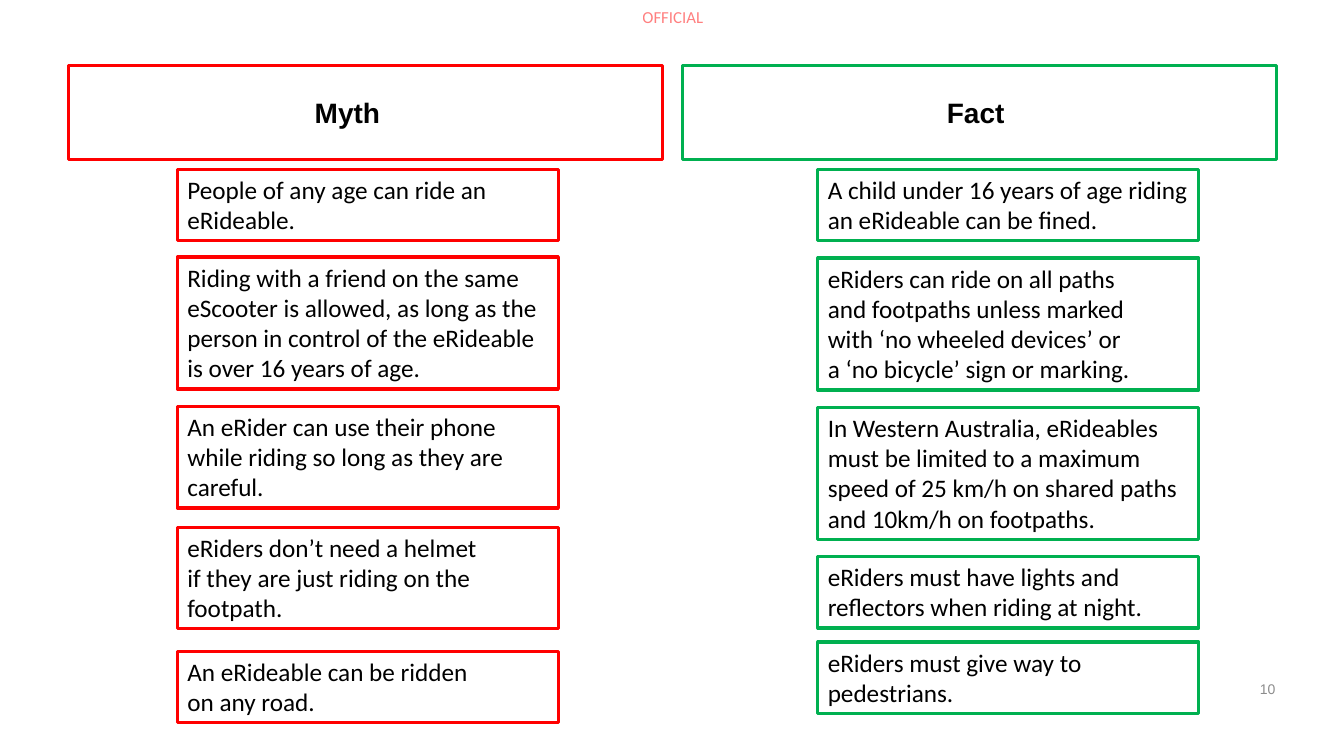
from pptx import Presentation
from pptx import util as u
from pptx.dml.color import RGBColor
from pptx.enum import shapes, text
from lxml import etree

RED, GREEN = "FF0000", "00B050"
MID, TOP = text.MSO_ANCHOR.MIDDLE, text.MSO_ANCHOR.TOP
LEFT, CENTER, RIGHT = text.PP_ALIGN.LEFT, text.PP_ALIGN.CENTER, text.PP_ALIGN.RIGHT


def rgb(code):
    return RGBColor.from_string(code)


class Deck:
    """Draws styled elements on a grid of 100 columns by 100 rows."""

    def __init__(self):
        self.prs = Presentation()
        self.prs.slide_width = u.Inches(13.33)
        self.prs.slide_height = u.Inches(7.5)
        self.slide = self.prs.slides.add_slide(self.prs.slide_layouts[6])

    def place(self, x, y, w, h):
        col, row = self.prs.slide_width / 100, self.prs.slide_height / 100
        return [int(n) for n in (x * col, y * row, w * col, h * row)]

    def letter(self, shape, words, size, face="Calibri", color="000000",
               bold=False, align=LEFT, anchor=TOP, pad=(0, 0, 0, 0), wrap=True):
        frame = shape.text_frame
        frame.word_wrap = wrap
        frame.vertical_anchor = anchor
        (frame.margin_left, frame.margin_top,
         frame.margin_right, frame.margin_bottom) = map(u.Inches, pad)
        frame.text = words
        for para in frame.paragraphs:
            para.alignment = align
            font = para.font
            font.name, font.size, font.bold = face, u.Pt(size), bold
            font.color.rgb = rgb(color)

    def label(self, words, area, size, **style):
        box = self.slide.shapes.add_textbox(*self.place(*area))
        self.letter(box, words, size, **style)
        return box

    def frame(self, words, area, edge, size, **style):
        box = self.slide.shapes.add_shape(
            shapes.MSO_SHAPE.RECTANGLE, *self.place(*area))
        box.shadow.inherit = False
        box.fill.background()
        box.line.color.rgb = rgb(edge)
        box.line.width = u.Pt(2.25)
        self.letter(box, words, size, **style)

    def head(self, words, x, edge, shift):
        self.frame(words, (x, 8.67, 44.2, 12.4), edge, 20, face="Arial",
                   bold=True, align=CENTER, anchor=MID, pad=(0, 0, shift, 0))

    def claim(self, words, x, y, lines, edge):
        self.frame(words, (x, y, 28.35, 4 * lines + 1.47), edge, 18,
                   pad=(0.1, 0.05, 0.1, 0.05))

    def fade(self, box, share):
        for fill in box._element.iter("{*}srgbClr"):
            tag = etree.QName(fill).namespace
            etree.SubElement(fill, f"{{{tag}}}alpha", val=str(share * 1000))


MYTHS = [
    (22.4, 2, "People of any age can ride an eRideable."),
    (34, 4, "Riding with a friend on the same eScooter is allowed, as long as "
            "the person in control of the eRideable is over 16 years of age."),
    (53.73, 3, "An eRider can use their phone while riding so long as they "
               "are careful."),
    (69.73, 3, "eRiders don’t need a helmet\n"
               "if they are just riding on the footpath."),
    (86.13, 2, "An eRideable can be ridden\non any road."),
]
FACTS = [
    (22.4, 2, "A child under 16 years of age riding an eRideable can be fined."),
    (34.13, 4, "eRiders can ride on all paths\nand footpaths unless marked\n"
               "with ‘no wheeled devices’ or\na ‘no bicycle’ sign or marking."),
    (53.87, 4, "In Western Australia, eRideables must be limited to a maximum "
               "speed of 25 km/h on shared paths and 10km/h on footpaths."),
    (73.6, 2, "eRiders must have lights and reflectors when riding at night."),
    (84.93, 2, "eRiders must give way to pedestrians."),
]
SIDES = [
    ("Myth", 5.1, 0.36, 13.2, RED, MYTHS),
    ("Fact", 50.8, 0.08, 60.85, GREEN, FACTS),
]


def main():
    deck = Deck()
    mark = deck.label("OFFICIAL", (47.8, 0.93, 4.8, 2.67), 12,
                      color=RED, wrap=False)
    deck.fade(mark, 50)
    for title, x, shift, inner, edge, claims in SIDES:
        deck.head(title, x, edge, shift)
        for y, lines, words in claims:
            deck.claim(words, inner, y, lines, edge)
    deck.label("10", (72.5, 88.8, 22.4, 4.67), 10, face="Arial",
               color="8C8C8C", align=RIGHT, anchor=MID)
    deck.prs.save("out.pptx")


if __name__ == "__main__":
    main()
